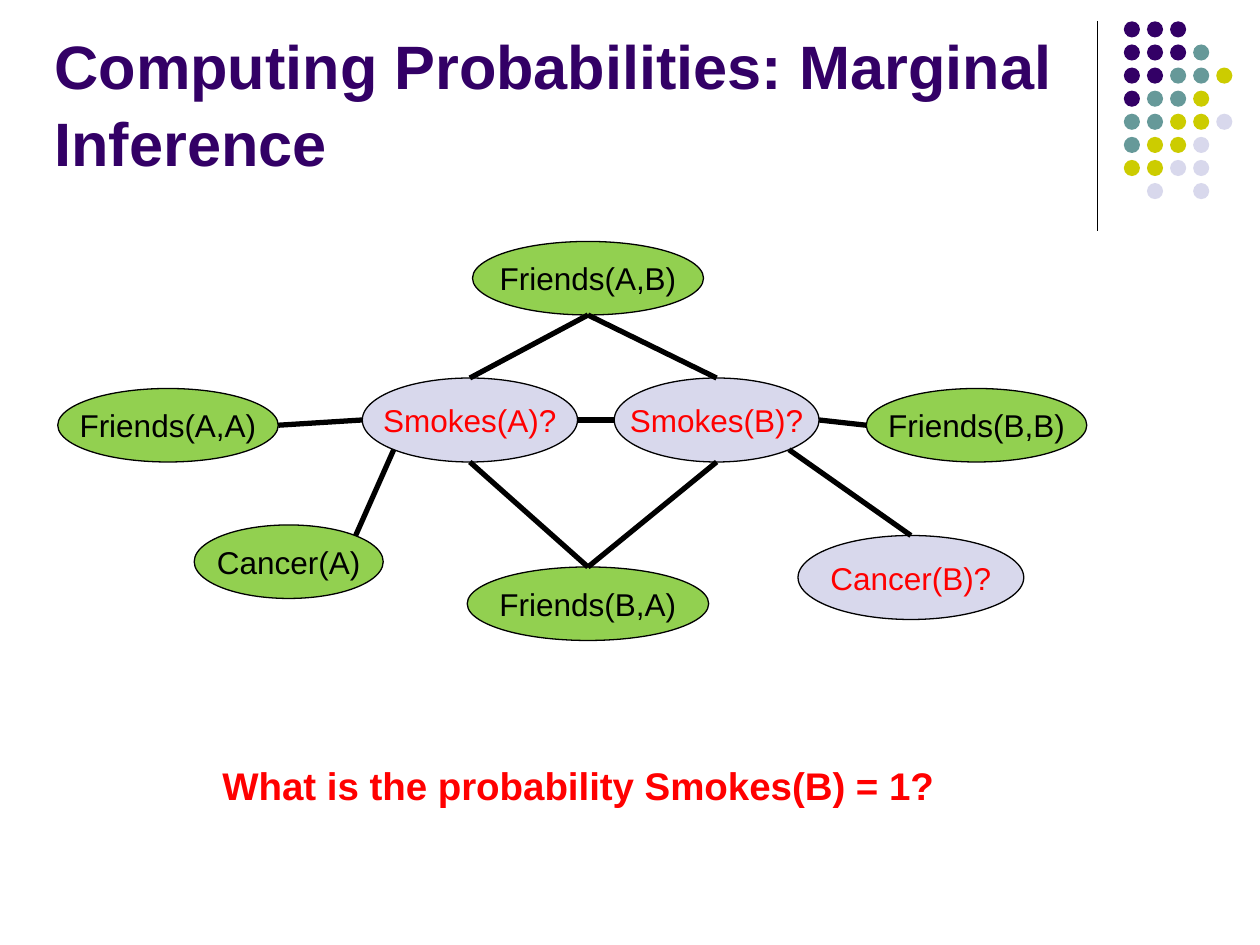
import math
import pptx
import pptx.util
import pptx.dml.color
import pptx.enum.shapes
import pptx.enum.text
import pptx.oxml.ns
import lxml.etree

Pt = pptx.util.Pt
ALIGN = pptx.enum.text.PP_ALIGN
ANCHOR = pptx.enum.text.MSO_ANCHOR

THEME = {
    "font": "Arial",
    "title_size": 35, "node_size": 18, "question_size": 22,
    "purple": "330066", "teal": "669999", "olive": "CCCC00", "lavender": "D8D8EC",
    "green": "92D050", "red": "FF0000", "black": "000000",
    "thin": 0.75, "thick": 3,
}

TITLE = "Computing Probabilities: Marginal Inference"
TITLE_BOX = (24, 18, 594, 88)
QUESTION = "What is the probability Smokes(B) = 1?"
QUESTION_BOX = (120, 432, 450, 34)

NODES = {
    "Cancer(A)": (111, 300, 108, 42),
    "Smokes(A)?": (207, 216, 123, 48),
    "Friends(A,A)": (33, 222, 126, 42),
    "Friends(B,A)": (267, 324, 138, 42),
    "Smokes(B)?": (351, 216, 117, 48),
    "Friends(A,B)": (270, 138, 132, 42),
    "Cancer(B)?": (456, 306, 129, 48),
    "Friends(B,B)": (495, 222, 126, 42),
}

EDGES = [
    ("Friends(B,A)", "top", "Smokes(A)?", "bottom"),
    ("Smokes(A)?", "right", "Smokes(B)?", "left"),
    ("Smokes(B)?", "bottom", "Friends(B,A)", "top"),
    ("Smokes(A)?", "bottom left", "Cancer(A)", "top right"),
    ("Friends(A,A)", "right", "Smokes(A)?", "left"),
    ("Friends(A,B)", "bottom", "Smokes(A)?", "top"),
    ("Smokes(B)?", "top", "Friends(A,B)", "bottom"),
    ("Smokes(B)?", "bottom right", "Cancer(B)?", "top"),
    ("Friends(B,B)", "left", "Smokes(B)?", "right"),
]

DIAGONAL = math.sqrt(0.5)
SITES = {
    "top": (0, -1), "bottom": (0, 1), "left": (-1, 0), "right": (1, 0),
    "bottom left": (-DIAGONAL, DIAGONAL),
    "bottom right": (DIAGONAL, DIAGONAL),
    "top right": (DIAGONAL, -DIAGONAL),
}

DIVIDER = ((627, 12), (627, 132))
DOT_ROWS = ["PPP", "PPPT", "PPTTO", "PTTO", "TTOOL", "TOOL", "OOLL", " L L"]
DOT_COLORS = {"P": "purple", "T": "teal", "O": "olive", "L": "lavender"}
DOT_ORIGIN = (642.2, 12.2)
DOT_PITCH = 13.2
DOT_SIZE = 9.2


def color(name):
    return pptx.dml.color.RGBColor.from_string(THEME[name])


def points(values):
    return [Pt(value) for value in values]


def write(shape, text, size, color_name, bold=False, align=ALIGN.LEFT,
          anchor=ANCHOR.TOP, wrap=True):
    frame = shape.text_frame
    frame.text = text
    frame.word_wrap = wrap
    frame.vertical_anchor = anchor
    paragraph = frame.paragraphs[0]
    paragraph.alignment = align
    font = paragraph.runs[0].font
    font.name = THEME["font"]
    font.size = Pt(THEME[size])
    font.bold = bold
    font.color.rgb = color(color_name)
    return paragraph


def add_ellipse(shapes, box, fill, outlined=False):
    shape = shapes.add_shape(pptx.enum.shapes.MSO_SHAPE.OVAL, *points(box))
    shape.shadow.inherit = False
    shape.fill.solid()
    shape.fill.fore_color.rgb = color(fill)
    if outlined:
        shape.line.color.rgb = color("black")
        shape.line.width = Pt(THEME["thin"])
    else:
        shape.line.fill.background()
    return shape


def add_line(shapes, start, end, width):
    connector = shapes.add_connector(
        pptx.enum.shapes.MSO_CONNECTOR.STRAIGHT, *points(start + end))
    connector.line.color.rgb = color("black")
    connector.line.width = Pt(THEME[width])
    lxml.etree.SubElement(connector._element.spPr, pptx.oxml.ns.qn("a:effectLst"))


def site(node, name):
    left, top, width, height = NODES[node]
    across, down = SITES[name]
    return (round(left + width / 2 * (1 + across), 2),
            round(top + height / 2 * (1 + down), 2))


def add_dots(shapes):
    group = shapes.add_group_shape()
    for row, letters in enumerate(DOT_ROWS):
        for column, letter in enumerate(letters):
            if letter in DOT_COLORS:
                left = DOT_ORIGIN[0] + column * DOT_PITCH
                top = DOT_ORIGIN[1] + row * DOT_PITCH
                add_ellipse(group.shapes, (left, top, DOT_SIZE, DOT_SIZE),
                            DOT_COLORS[letter])


def main():
    presentation = pptx.Presentation()
    presentation.slide_width = Pt(720)
    presentation.slide_height = Pt(540)
    slide = presentation.slides.add_slide(presentation.slide_layouts[6])
    shapes = slide.shapes

    add_line(shapes, *DIVIDER, "thin")
    add_dots(shapes)

    title = shapes.add_textbox(*points(TITLE_BOX))
    paragraph = write(title, TITLE, "title_size", "purple", bold=True,
                      anchor=ANCHOR.BOTTOM)
    paragraph.line_spacing = 1.05

    for label, box in NODES.items():
        unknown = label.endswith("?")
        node = add_ellipse(shapes, box, "lavender" if unknown else "green",
                           outlined=True)
        write(node, label, "node_size", "red" if unknown else "black",
              align=ALIGN.CENTER, anchor=ANCHOR.MIDDLE, wrap=False)

    for start, start_site, end, end_site in EDGES:
        add_line(shapes, site(start, start_site), site(end, end_site), "thick")

    question = shapes.add_textbox(*points(QUESTION_BOX))
    write(question, QUESTION, "question_size", "red", bold=True)

    presentation.save("out.pptx")


if __name__ == "__main__":
    main()
